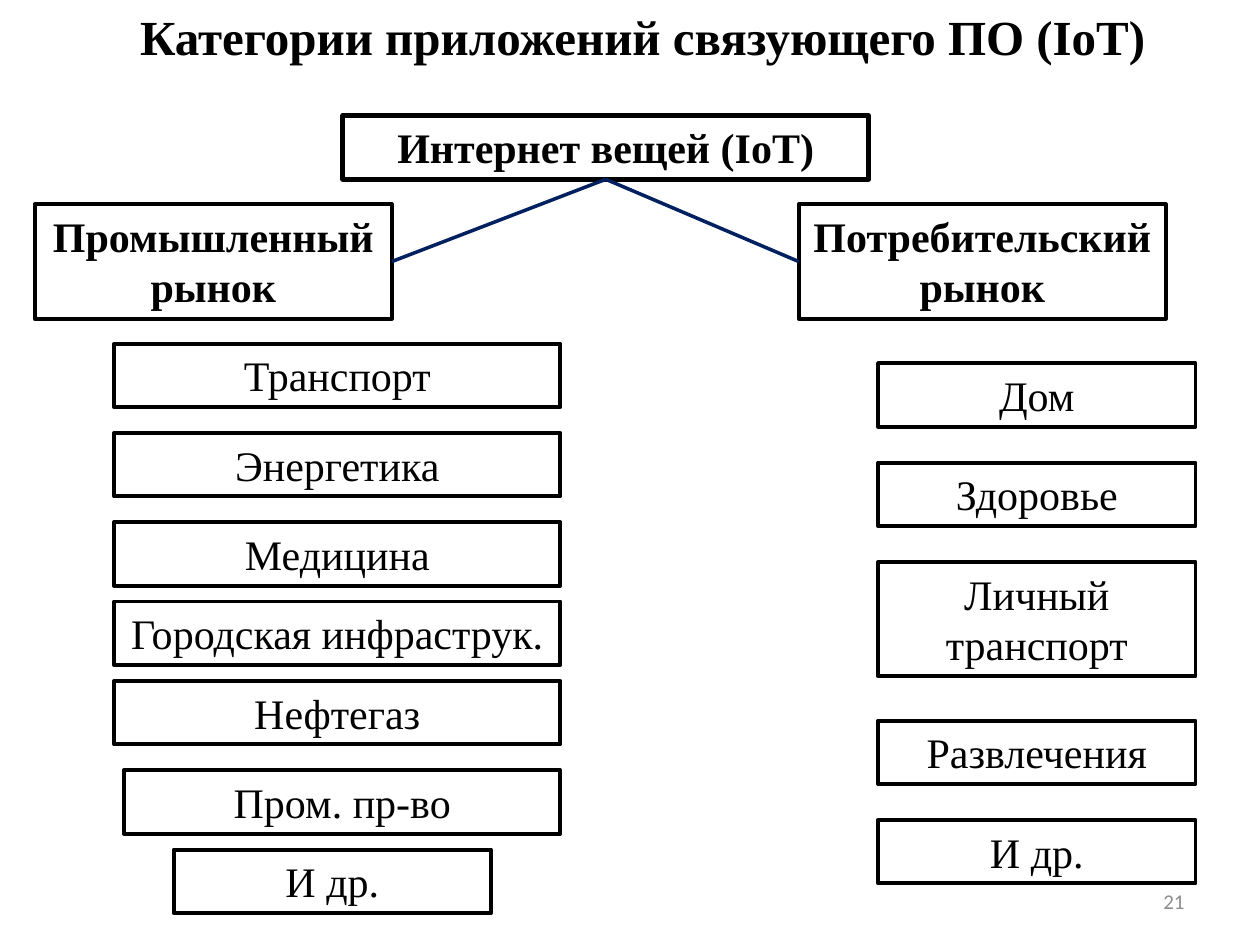
"""Build the slide on categories of IoT middleware applications."""
from dataclasses import dataclass

from lxml import etree
from pptx import Presentation
from pptx.dml.color import RGBColor
from pptx.enum.shapes import MSO_CONNECTOR, MSO_SHAPE
from pptx.enum.text import MSO_ANCHOR, MSO_AUTO_SIZE, PP_ALIGN
from pptx.oxml.ns import qn
from pptx.util import Pt

RECTANGLE = MSO_SHAPE.RECTANGLE
STRAIGHT = MSO_CONNECTOR.STRAIGHT
TOP, MIDDLE = MSO_ANCHOR.TOP, MSO_ANCHOR.MIDDLE
CENTER, RIGHT = PP_ALIGN.CENTER, PP_ALIGN.RIGHT
NO_FIT, GROW = MSO_AUTO_SIZE.NONE, MSO_AUTO_SIZE.SHAPE_TO_FIT_TEXT

SERIF, SANS = "Times New Roman", "Calibri"
BLACK, NAVY, GRAY = "000000", "002060", "8C8C8C"
ONE_LINE, TWO_LINES = 36.35, 65.43
LEFT_SITE, BOTTOM_SITE, RIGHT_SITE = 1, 2, 3


@dataclass
class Box:
    text: str
    left: float
    top: float
    width: float
    height: float = ONE_LINE
    bold: bool = False
    border: float = 2.25


ROOT = Box("Интернет вещей (IoT)", 195.9, 66.1, 300.5, bold=True, border=2.75)
INDUSTRIAL = Box("Промышленный рынок", 19.85, 116.75, 204.1, TWO_LINES, True)
CONSUMER = Box("Потребительский рынок", 456.4, 116.75, 209.8, TWO_LINES, True)

INDUSTRIAL_AREAS = [
    *(Box(text, 65.2, top, 255.1) for text, top in (
        ("Транспорт", 196.4),
        ("Энергетика", 247.4),
        ("Медицина", 298.4),
        ("Городская инфраструк.", 343.75),
        ("Нефтегаз", 389.1),
    )),
    Box("Пром. пр-во", 70.85, 440.1, 249.45),
    Box("И др.", 99.2, 485.5, 181.4),
]
CONSUMER_AREAS = [
    Box(text, 501.75, top, 181.4, height) for text, top, height in (
        ("Дом", 207.5, ONE_LINE),
        ("Здоровье", 264.4, ONE_LINE),
        ("Личный транспорт", 321.1, TWO_LINES),
        ("Развлечения", 411.8, ONE_LINE),
        ("И др.", 468.5, ONE_LINE),
    )
]


def color(value: str) -> RGBColor:
    return RGBColor.from_string(value)


def write(shape, text: str, size: float, *, bold=False, font=SERIF, ink=BLACK,
          align=CENTER, anchor=TOP, fit=GROW) -> None:
    frame = shape.text_frame
    frame.text = text
    frame_format = {"word_wrap": True, "auto_size": fit, "vertical_anchor": anchor}
    for name, value in frame_format.items():
        setattr(frame, name, value)
    paragraph = frame.paragraphs[0]
    paragraph.alignment = align
    run_font = paragraph.runs[0].font
    for name, value in {"name": font, "size": Pt(size), "bold": bold}.items():
        setattr(run_font, name, value)
    run_font.color.rgb = color(ink)


def draw_box(slide, box: Box):
    shape = slide.shapes.add_shape(
        RECTANGLE, Pt(box.left), Pt(box.top), Pt(box.width), Pt(box.height))
    shape.shadow.inherit = False
    shape.fill.background()
    shape.line.color.rgb = color(BLACK)
    shape.line.width = Pt(box.border)
    write(shape, box.text, 24, bold=box.bold)
    return shape


def draw_branch(slide, parent, child, site: int) -> None:
    branch = slide.shapes.add_connector(STRAIGHT, 0, 0, 0, 0)
    branch.begin_connect(parent, BOTTOM_SITE)
    branch.end_connect(child, site)
    branch.line.color.rgb = color(NAVY)
    branch.line.width = Pt(2)
    etree.SubElement(branch.element.spPr, qn("a:effectLst"))


def main() -> None:
    deck = Presentation()
    deck.slide_width, deck.slide_height = Pt(720), Pt(540)
    slide = deck.slides.add_slide(deck.slide_layouts[5])

    title = slide.shapes.title
    position = {"left": 14.4, "top": 0, "width": 705.6, "height": 41.2}
    for name, value in position.items():
        setattr(title, name, Pt(value))
    write(title, "Категории приложений cвязующего ПО (IoT)", 28, bold=True, fit=NO_FIT)

    root, industrial, consumer = (
        draw_box(slide, box) for box in (ROOT, INDUSTRIAL, CONSUMER))
    draw_branch(slide, root, industrial, RIGHT_SITE)
    draw_branch(slide, root, consumer, LEFT_SITE)
    for area in INDUSTRIAL_AREAS + CONSUMER_AREAS:
        draw_box(slide, area)

    page_number = slide.shapes.add_textbox(Pt(516), Pt(500.5), Pt(168), Pt(28.75))
    write(page_number, "21", 12, font=SANS, ink=GRAY, align=RIGHT,
          anchor=MIDDLE, fit=NO_FIT)
    deck.save("out.pptx")


if __name__ == "__main__":
    main()
